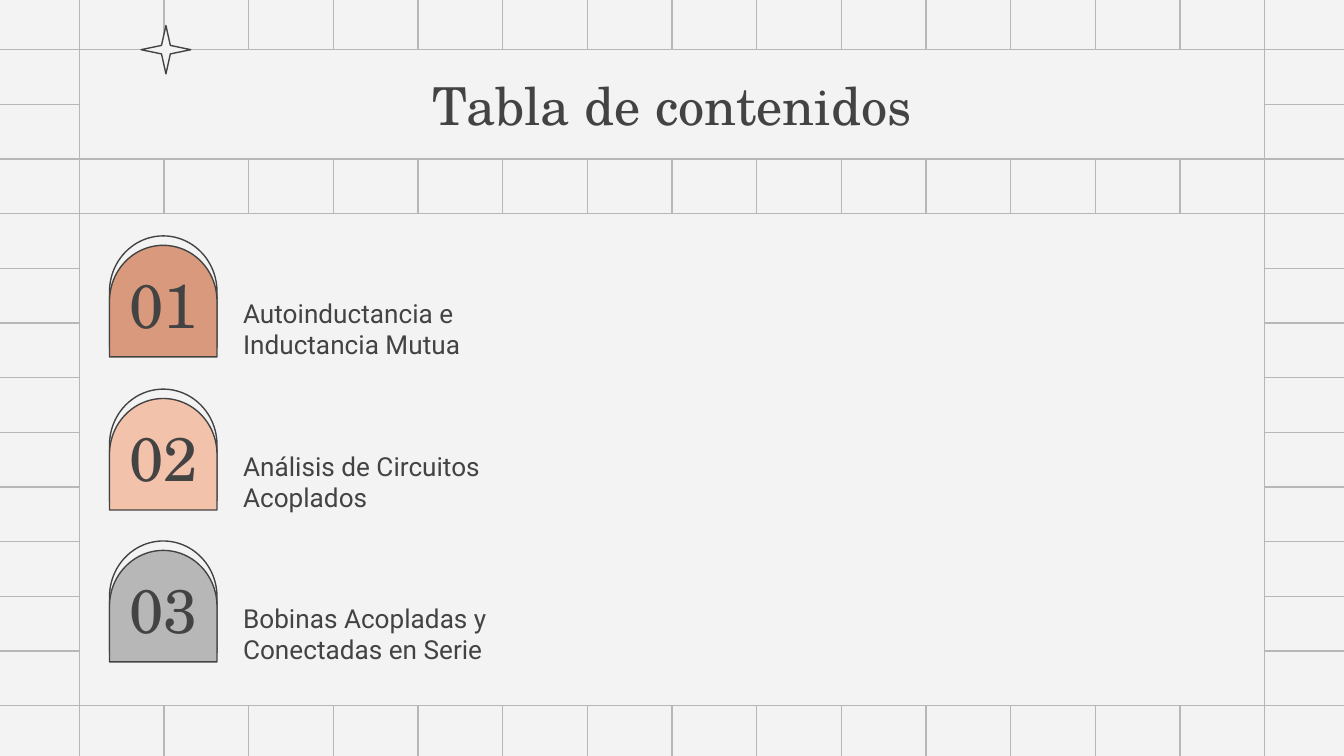
from lxml import etree
from pptx import Presentation
from pptx.dml.color import RGBColor
from pptx.enum.shapes import MSO_CONNECTOR, MSO_SHAPE
from pptx.enum.text import MSO_ANCHOR, PP_ALIGN
from pptx.oxml.ns import qn
from pptx.util import Inches, Pt

RECT = MSO_SHAPE.RECTANGLE
ARCH = MSO_SHAPE.FLOWCHART_DELAY
STAR = MSO_SHAPE.STAR_4_POINT
LINE = MSO_CONNECTOR.STRAIGHT
TOP, MIDDLE = MSO_ANCHOR.TOP, MSO_ANCHOR.MIDDLE
LEFT, CENTER = PP_ALIGN.LEFT, PP_ALIGN.CENTER

# Wide 16:9 slide
WIDTH = 10
HEIGHT = WIDTH * 9 / 16

COLORS = {
    "paper": "F3F3F3",
    "grid": "B7B7B7",
    "ink": "434343",
    "clay": "D9997D",
    "peach": "F2C2AB",
    "gray": "B7B7B7",
}

SERIF, SANS = "TeX Gyre Schola", "Roboto"
STYLES = {
    "title": {
        "font": {"name": SERIF, "size": Pt(28)},
        "para": {"alignment": CENTER},
        "anchor": MIDDLE,
    },
    "number": {
        "font": {"name": SERIF, "size": Pt(33)},
        "para": {"alignment": CENTER},
        "anchor": MIDDLE,
    },
    "topic": {
        "font": {"name": SANS, "size": Pt(14)},
        "para": {"alignment": LEFT, "space_after": Pt(12)},
        "anchor": TOP,
    },
}

# Top of each row, number, topic, arch colour
TOPICS = [
    (1.77, "01", "Autoinductancia e Inductancia Mutua", "clay"),
    (2.91, "02", "Análisis de Circuitos Acoplados", "peach"),
    (4.04, "03", "Bobinas Acopladas y Conectadas en Serie", "gray"),
]


def color(name):
    return RGBColor.from_string(COLORS[name])


def put(item, values):
    for name, value in values.items():
        setattr(item, name, value)


def add_line(slide, start, end):
    ends = [Inches(v) for v in (*start, *end)]
    line = slide.shapes.add_connector(LINE, *ends)
    line.line.color.rgb = color("grid")
    line.line.width = Pt(0.75)
    etree.SubElement(line._element.spPr, qn("a:effectLst"))


def add_shape(slide, kind, box, fill, edge):
    shape = slide.shapes.add_shape(kind, *[Inches(v) for v in box])
    shape.shadow.inherit = False
    shape.fill.solid()
    shape.fill.fore_color.rgb = color(fill)
    shape.line.color.rgb = color(edge)
    shape.line.width = Pt(0.75)
    return shape


def set_text(shape, text, style):
    look = STYLES[style]
    frame = shape.text_frame
    put(frame, {"word_wrap": True, "vertical_anchor": look["anchor"]})
    sides = ("left", "right", "top", "bottom")
    put(frame, {f"margin_{side}": Inches(0.1) for side in sides})
    para = frame.paragraphs[0]
    put(para, look["para"])
    run = para.add_run()
    run.text = text
    put(run.font, look["font"])
    run.font.color.rgb = color("ink")


def add_text(slide, box, text, style):
    shape = slide.shapes.add_textbox(*[Inches(v) for v in box])
    set_text(shape, text, style)


def add_grid(slide):
    # Each line is made of two halves that meet at the slide centre
    for col in range(15):
        x = 0.59 + 0.63 * col
        for top, end in ((-0.03, 2.81), (2.81, 5.66)):
            add_line(slide, (x, top), (x, end))
    for row in range(13):
        y = 0.37 + (5.25 - 0.37) / 12 * row
        for left, end in ((-0.04, 5), (5, 10.04)):
            add_line(slide, (left, y), (end, y))


def add_arch(slide, top, fill):
    # An empty arch peeks out above the filled one
    for y, tint in ((top, "paper"), (top + 0.07, fill)):
        arch = add_shape(slide, ARCH, (0.8, y, 0.83, 0.8), tint, "ink")
        arch.rotation = 270


def add_topic(slide, top, number, text, fill):
    add_arch(slide, top, fill)
    add_text(slide, (1.71, top + 0.34, 2.42, 0.65), text, "topic")
    add_text(slide, (0.75, top + 0.22, 0.93, 0.54), number, "number")


def main():
    deck = Presentation()
    put(deck, {"slide_width": Inches(WIDTH), "slide_height": Inches(HEIGHT)})
    slide = deck.slides.add_slide(deck.slide_layouts[6])

    # Background and grid
    back = slide.background.fill
    back.solid()
    back.fore_color.rgb = color("paper")
    add_grid(slide)

    # Panel and title bar
    add_shape(slide, RECT, (0.59, 1.59, 8.82, 3.66), "paper", "grid")
    title = add_shape(slide, RECT, (0.59, 0.37, 8.82, 0.81), "paper", "grid")
    set_text(title, "Tabla de contenidos", "title")

    # Contents
    for topic in TOPICS:
        add_topic(slide, *topic)

    # Star on the title bar
    star = add_shape(slide, STAR, (1.05, 0.19, 0.37, 0.36), "paper", "ink")
    star.adjustments[0] = 0.125

    deck.save("out.pptx")


if __name__ == "__main__":
    main()
